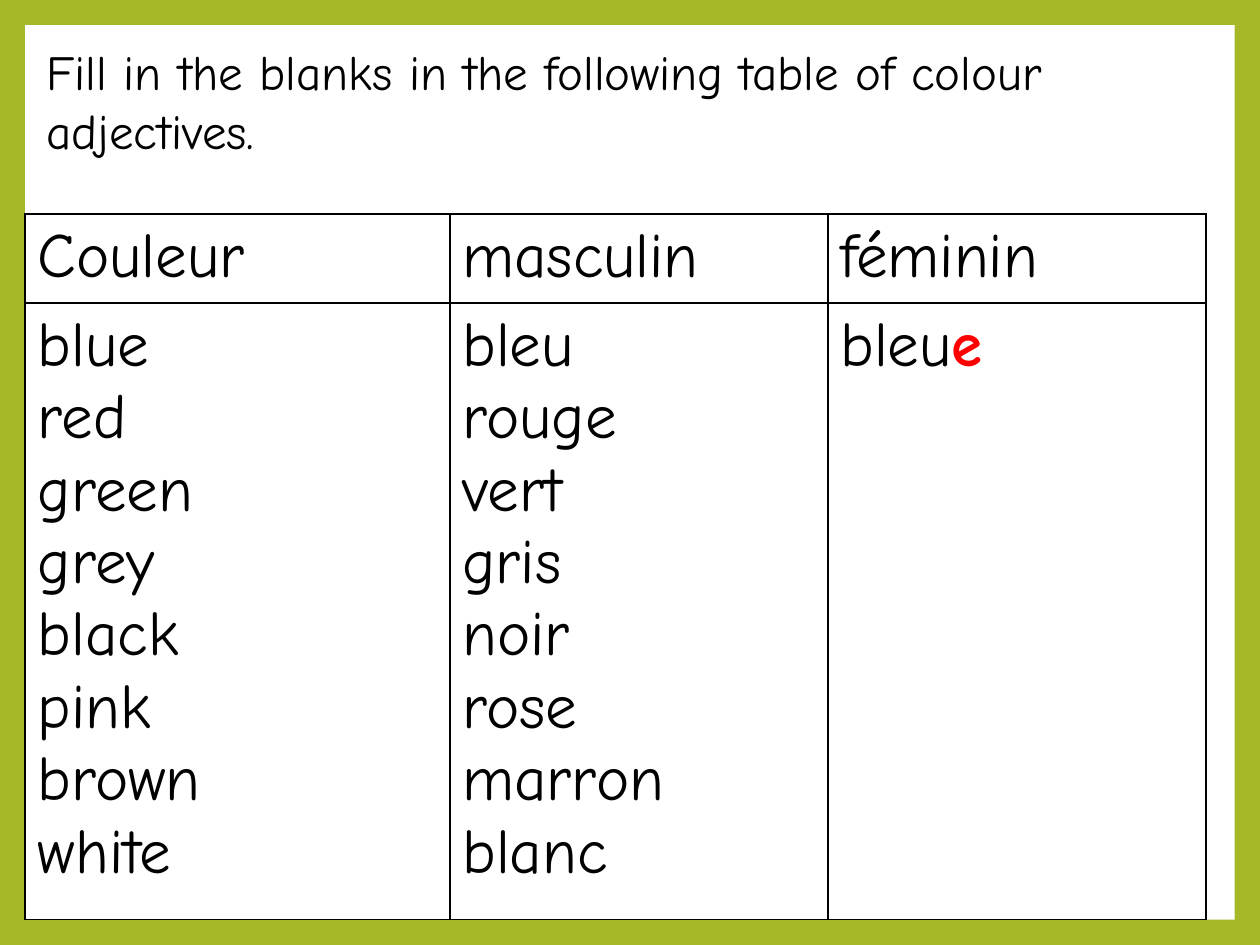
from dataclasses import dataclass

from lxml.etree import SubElement
from pptx import Presentation
from pptx.dml.color import RGBColor
from pptx.enum.shapes import MSO_SHAPE
from pptx.enum.text import MSO_ANCHOR, MSO_AUTO_SIZE, PP_ALIGN
from pptx.oxml import parse_xml
from pptx.oxml.ns import nsdecls, qn
from pptx.util import Pt


@dataclass(frozen=True)
class Theme:
    font: str = "Comic Neue"
    frame: str = "A6B727"
    paper: str = "FFFFFF"
    ink: str = "000000"
    accent: str = "FF0000"
    title_size: float = 28
    table_size: float = 36
    border: float = 1


class Page:
    def __init__(self, deck, theme):
        self.theme = theme
        self.slide = deck.slides.add_slide(deck.slide_layouts[5])
        self.paint(self.slide.background.fill, theme.frame)

    def paint(self, fill, colour):
        fill.solid()
        fill.fore_color.rgb = RGBColor.from_string(colour)

    def add_span(self, para, text, size, accent=False):
        span = para.add_run()
        span.text = text
        span.font.name = self.theme.font
        span.font.size = Pt(size)
        span.font.bold = accent
        colour = self.theme.accent if accent else self.theme.ink
        span.font.color.rgb = RGBColor.from_string(colour)

    def panel(self, left, top, width, height):
        box = self.slide.shapes.add_shape(
            MSO_SHAPE.RECTANGLE, Pt(left), Pt(top), Pt(width), Pt(height))
        box.shadow.inherit = False
        self.paint(box.fill, self.theme.paper)
        box.line.fill.background()
        self.slide.shapes.title.element.addprevious(box.element)

    def title(self, text, left, top, width, height):
        box = self.slide.shapes.title
        box.left, box.top = Pt(left), Pt(top)
        box.width, box.height = Pt(width), Pt(height)
        self.paint(box.fill, self.theme.paper)
        frame = box.text_frame
        frame.word_wrap = True
        frame.auto_size = MSO_AUTO_SIZE.NONE
        frame.vertical_anchor = MSO_ANCHOR.MIDDLE
        para = frame.paragraphs[0]
        para.alignment = PP_ALIGN.LEFT
        self.add_span(para, text, self.theme.title_size)

    def outline(self, cell):
        properties = cell._tc.get_or_add_tcPr()
        for index, side in enumerate(("lnL", "lnR", "lnT", "lnB")):
            properties.insert(index, parse_xml(
                f'<a:{side} {nsdecls("a")} w="{Pt(self.theme.border)}"><a:solidFill>'
                f'<a:srgbClr val="{self.theme.ink}"/></a:solidFill></a:{side}>'))

    def fill_cell(self, cell, lines, translucent):
        self.paint(cell.fill, self.theme.paper)
        if translucent:
            colour = next(cell._tc.tcPr.iter(qn("a:srgbClr")))
            SubElement(colour, qn("a:alpha"), val="50000")
        self.outline(cell)
        frame = cell.text_frame
        for index, line in enumerate(lines):
            para = frame.add_paragraph() if index else frame.paragraphs[0]
            stem, *endings = line.split("|")
            self.add_span(para, stem, self.theme.table_size)
            for ending in endings:
                self.add_span(para, ending, self.theme.table_size, accent=True)

    def table(self, rows, left, top, widths, heights):
        table = self.slide.shapes.add_table(
            len(rows), len(widths), Pt(left), Pt(top),
            Pt(sum(widths)), Pt(sum(heights))).table
        table.first_row = table.horz_banding = False
        for column, width in zip(table.columns, widths):
            column.width = Pt(width)
        for index, (row, height) in enumerate(zip(rows, heights)):
            table.rows[index].height = Pt(height)
            for cell, lines in zip(table.rows[index].cells, row):
                self.fill_cell(cell, lines, translucent=index == 0)


def main():
    deck = Presentation()
    deck.slide_width, deck.slide_height = Pt(720), Pt(540)
    page = Page(deck, Theme())
    page.panel(14.4, 14.4, 691.2, 511.2)
    page.title("Fill in the blanks in the following table of colour adjectives.",
               19.44, 20.16, 668.88, 74.16)
    header = [["Couleur"], ["masculin"], ["féminin"]]
    colours = [
        ["blue", "red", "green", "grey", "black", "pink", "brown", "white"],
        ["bleu", "rouge", "vert", "gris", "noir", "rose", "marron", "blanc"],
        ["bleu|e"],
    ]
    page.table([header, colours], 14.4, 122.4, [242.64, 216, 216], [50.8, 352.4])
    deck.save("out.pptx")


if __name__ == "__main__":
    main()
